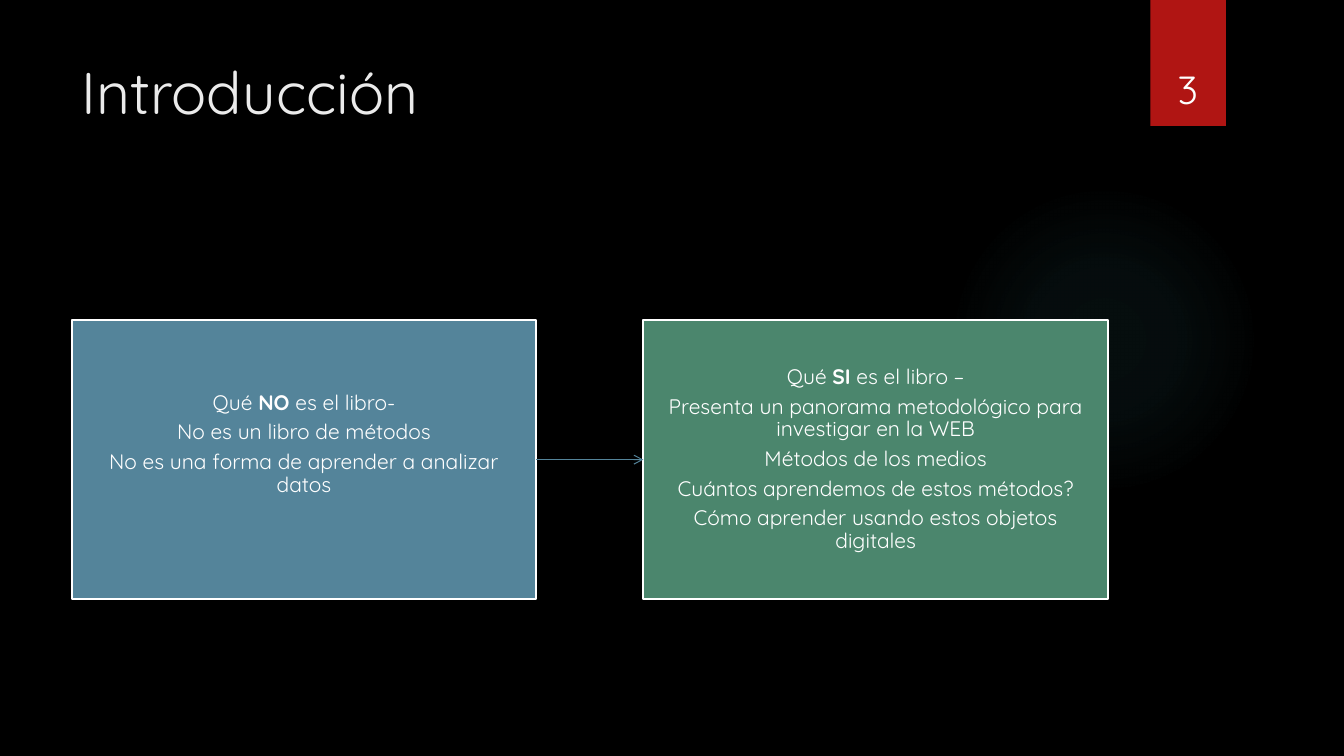
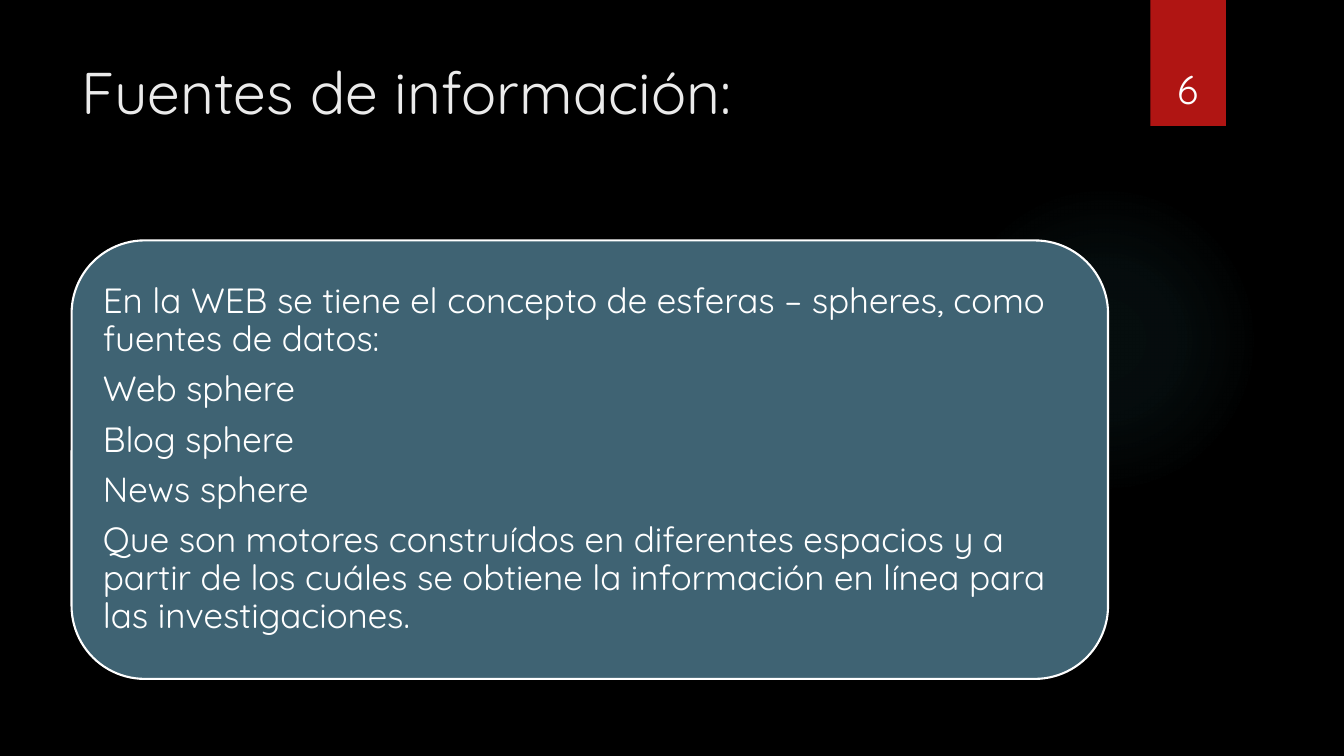
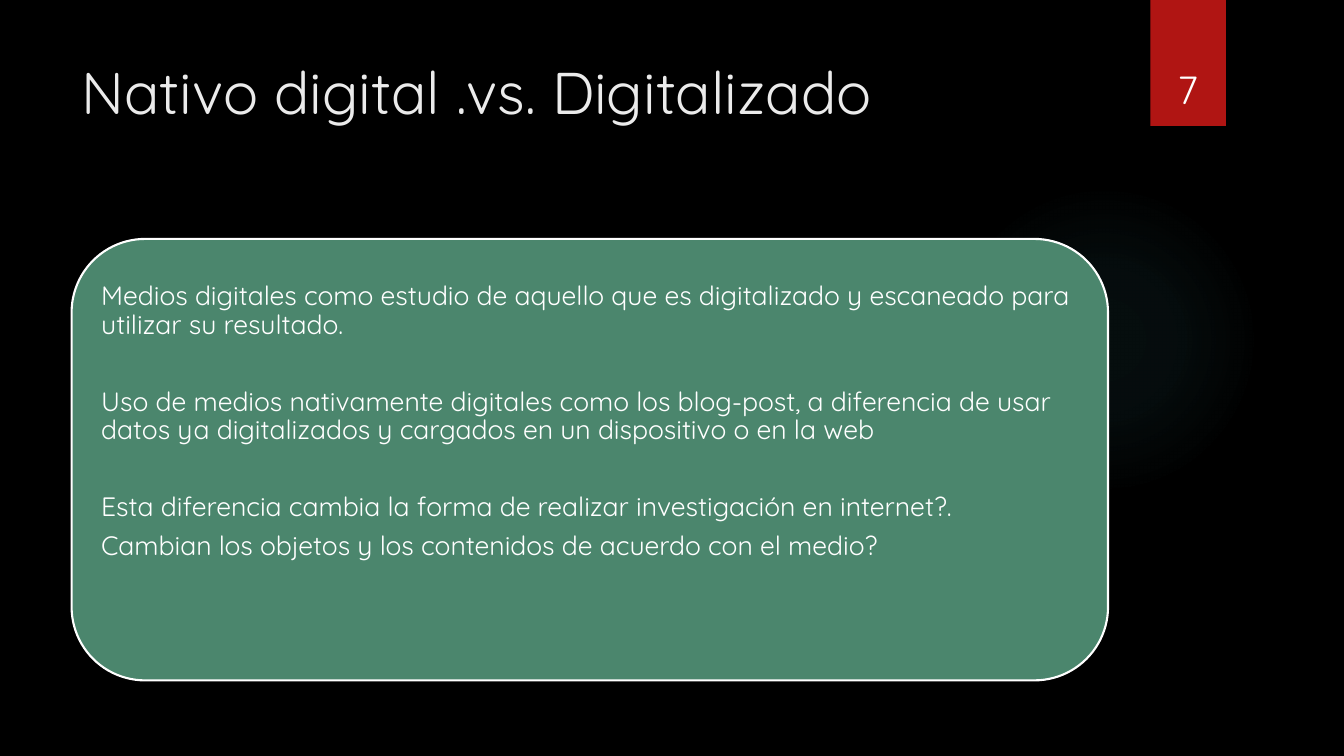
from lxml import etree
from pptx import Presentation
from pptx import util as u
from pptx.dml.color import RGBColor
from pptx.enum import shapes, text
from pptx.oxml import ns, parse_xml

# Shared look
FONT = "Quicksand"
BLACK, WHITE, PALE, RED = "000000", "FFFFFF", "EBEBEB", "B01513"
BLUE, NAVY, GREEN, GLOW = "54849A", "3F6373", "4B866D", "50B9C1"

# Shared grid, in inches
WIDE, HIGH = 13.33, 7.5
LEFT, SPAN, GAP = 0.71, 10.28, 1.06
COL = (SPAN - GAP) / 2
MID = 4.56

KIND = shapes.MSO_SHAPE
ALIGN = text.PP_ALIGN
ANCHOR = text.MSO_ANCHOR


def color(code):
    return RGBColor.from_string(code)


def place(item, x, y, w, h):
    item.left, item.top = u.Inches(x), u.Inches(y)
    item.width, item.height = u.Inches(w), u.Inches(h)


def write(frame, lines, size=15, ink=WHITE, align=ALIGN.LEFT,
          anchor=ANCHOR.MIDDLE, inset=(0.1, 0.05, 0.1, 0.05),
          lead=1.0, after=0, wide=()):
    """Fill a frame; **marks** give bold, wide maps a line to its own gap."""
    frame.word_wrap = True
    frame.auto_size = text.MSO_AUTO_SIZE.NONE
    frame.vertical_anchor = anchor
    (frame.margin_left, frame.margin_top,
     frame.margin_right, frame.margin_bottom) = map(u.Inches, inset)
    for n, line in enumerate(lines):
        para = frame.paragraphs[0] if n == 0 else frame.add_paragraph()
        para.alignment = align
        para.line_spacing = lead
        para.space_before = u.Pt(0)
        para.space_after = u.Pt(dict(wide).get(n, after))
        for i, part in enumerate(line.split("**")):
            run = para.add_run()
            run.text = part
            font = run.font
            font.name, font.size, font.bold = FONT, u.Pt(size), i % 2 == 1
            font.color.rgb = color(ink)


def shape(slide, kind, x, y, w, h, fill=None, line=None):
    item = slide.shapes.add_shape(kind, *map(u.Inches, (x, y, w, h)))
    item.shadow.inherit = False
    if fill:
        item.fill.solid()
        item.fill.fore_color.rgb = color(fill)
    else:
        item.fill.background()
    if line:
        item.line.color.rgb = color(line)
        item.line.width = u.Pt(1.5)
    else:
        item.line.fill.background()
    return item


def glow(slide):
    item = shape(slide, KIND.OVAL, 9.41, 1.83, 3.08, 3.08)
    stops = "".join(
        f'<a:gs pos="{pos}000"><a:srgbClr val="{GLOW}">'
        f'<a:alpha val="{alpha}000"/></a:srgbClr></a:gs>'
        for pos, alpha in ((0, 7), (36, 6), (69, 0)))
    grad = parse_xml(
        f'<a:gradFill {ns.nsdecls("a")}><a:gsLst>{stops}</a:gsLst>'
        '<a:path path="circle"><a:fillToRect l="50000" t="50000" '
        'r="50000" b="50000"/></a:path></a:gradFill>')
    props = item._element.spPr
    props.replace(props.find(ns.qn("a:noFill")), grad)


def page(deck, title, number):
    """Add a slide with its glow, red tab, title and number."""
    slide = deck.slides.add_slide(deck.slide_layouts[5])
    glow(slide)
    shape(slide, KIND.RECTANGLE, 11.41, 0, 0.75, 1.25, RED)
    head = slide.shapes.title
    place(head, LEFT, 0.5, SPAN, 1.53)
    write(head.text_frame, [title], size=42, ink=PALE, anchor=ANCHOR.TOP)
    box = slide.shapes.add_textbox(*map(u.Inches, (11.32, 0.32, 0.92, 0.84)))
    write(box.text_frame, [str(number)], size=28, align=ALIGN.CENTER,
          anchor=ANCHOR.BOTTOM)
    return slide


def card(slide, col, fill, lines, foot=0.24):
    """Add a centred card in column 0 or 1."""
    high = 2.77
    item = shape(slide, KIND.RECTANGLE, LEFT + col * (COL + GAP),
                 MID - high / 2, COL, high, fill, WHITE)
    write(item.text_frame, lines, align=ALIGN.CENTER,
          inset=(0.23, 0.24, 0.23, foot), lead=0.9, after=5)
    return item


def panel(slide, high, fill, lines, pad, foot=0, **style):
    """Add a full-width rounded panel."""
    item = shape(slide, KIND.ROUNDED_RECTANGLE, LEFT, MID - high / 2,
                 SPAN, high, fill, WHITE)
    write(item.text_frame, lines, inset=(pad, pad, pad, pad + foot),
          lead=0.9, **style)


def arrow(slide, start, end):
    """Join the right side of one box to the left side of another."""
    link = slide.shapes.add_connector(shapes.MSO_CONNECTOR.STRAIGHT, 0, 0, 0, 0)
    link.begin_connect(start, 3)
    link.end_connect(end, 1)
    link.line.color.rgb = color(BLUE)
    link.line.width = u.Pt(0.75)
    etree.SubElement(link.line._get_or_add_ln(), ns.qn("a:tailEnd"),
                     type="arrow")
    etree.SubElement(link._element.spPr, ns.qn("a:effectLst"))


def main():
    deck = Presentation()
    deck.slide_width, deck.slide_height = u.Inches(WIDE), u.Inches(HIGH)
    back = deck.slide_master.background.fill
    back.solid()
    back.fore_color.rgb = color(BLACK)

    # What the book is and is not
    slide = page(deck, "Introducción", 3)
    no = card(slide, 0, BLUE, [
        "Qué **NO** es el libro-",
        "No es un libro de métodos",
        "No es una forma de aprender a analizar datos"], foot=0.54)
    yes = card(slide, 1, GREEN, [
        "Qué **SI** es el libro –",
        "Presenta un panorama metodológico para investigar en la WEB",
        "Métodos de los medios",
        "Cuántos aprendemos de estos métodos?",
        "Cómo aprender usando estos objetos digitales"])
    arrow(slide, no, yes)

    # Sources
    slide = page(deck, "Fuentes de información:", 6)
    panel(slide, 4.35, NAVY, [
        "En la WEB se tiene el concepto de esferas – spheres, como fuentes "
        "de datos:",
        "Web sphere",
        "Blog sphere",
        "News sphere",
        "Que son motores construídos en diferentes espacios y a partir de los "
        "cuáles se obtiene la información en línea para las investigaciones."],
        pad=0.1, size=25, after=9)

    # Born digital or digitised
    slide = page(deck, "Nativo digital .vs. Digitalizado", 7)
    panel(slide, 4.38, GREEN, [
        "Medios digitales como estudio de aquello que es digitalizado y "
        "escaneado para utilizar su resultado.",
        "Uso de medios nativamente digitales como los blog-post, a diferencia "
        "de usar datos ya digitalizados y cargados en un dispositivo o en la "
        "web",
        "Esta diferencia cambia la forma de realizar investigación en "
        "internet?.",
        "Cambian los objetos y los contenidos de acuerdo con el medio?"],
        pad=0.08, foot=0.75, size=19, after=7, wide={0: 34.5, 1: 34.5})

    deck.save("out.pptx")


if __name__ == "__main__":
    main()
